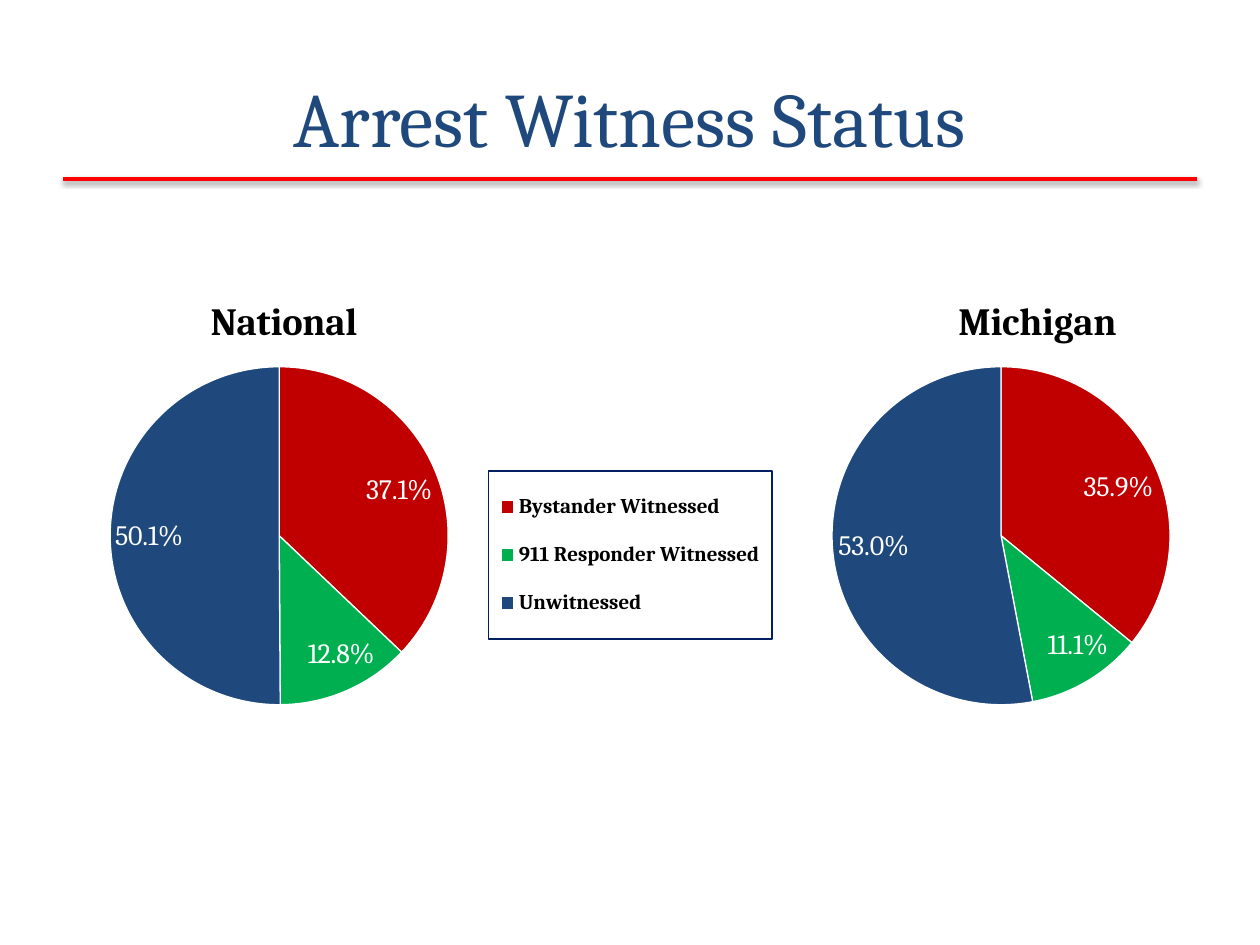
from dataclasses import dataclass

from lxml import etree
from pptx import Presentation
from pptx.chart.data import CategoryChartData
from pptx.dml.color import RGBColor
from pptx.enum.chart import XL_CHART_TYPE as ChartType
from pptx.enum.chart import XL_LABEL_POSITION as LabelPos
from pptx.enum.chart import XL_LEGEND_POSITION as LegendPos
from pptx.enum.shapes import MSO_CONNECTOR as Connector
from pptx.enum.text import MSO_ANCHOR as Anchor
from pptx.enum.text import PP_ALIGN as Align
from pptx.oxml import parse_xml
from pptx.oxml.ns import nsdecls, qn
from pptx.util import Pt


@dataclass(frozen=True)
class Theme:
    font: str = "Cambria"
    navy: RGBColor = RGBColor(0x1F, 0x49, 0x7D)
    border: RGBColor = RGBColor(0x00, 0x20, 0x60)
    crimson: RGBColor = RGBColor(0xC0, 0x00, 0x00)
    green: RGBColor = RGBColor(0x00, 0xB0, 0x50)
    rule: RGBColor = RGBColor(0xFF, 0x00, 0x00)
    black: RGBColor = RGBColor(0x00, 0x00, 0x00)
    white: RGBColor = RGBColor(0xFF, 0xFF, 0xFF)
    title_size: int = 44
    pie_title_size: int = 22
    base_size: int = 18
    label_size: int = 16
    legend_size: int = 12


THEME = Theme()
SLICE_COLORS = (THEME.crimson, THEME.green, THEME.navy)
WITNESSES = ("Bystander Witnessed", "911 Responder Witnessed", "Unwitnessed")
PIE_AREA = {"x": 0.095, "y": 0.273, "w": 0.548, "h": 0.542}
LEGEND_AREA = {"x": 0.635, "y": 0.44, "w": 0.36, "h": 0.27}


def style_font(font, size, color, bold=False):
    formats = {"name": THEME.font, "size": Pt(size), "bold": bold}
    for attribute, value in formats.items():
        setattr(font, attribute, value)
    font.color.rgb = color


def set_layout(part, area, inner=False):
    """Give a chart part a manual layout in fractions of the chart."""
    for old in part.findall(qn("c:layout")):
        part.remove(old)
    layout = etree.Element(qn("c:layout"))
    manual = etree.SubElement(layout, qn("c:manualLayout"))
    settings = [("layoutTarget", "inner")] if inner else []
    settings += [("xMode", "edge"), ("yMode", "edge")]
    settings += [(side, str(share)) for side, share in area.items()]
    for tag, value in settings:
        etree.SubElement(manual, qn(f"c:{tag}")).set("val", value)
    overlay = part.find(qn("c:overlay"))
    if overlay is None:
        part.insert(0, layout)
    else:
        overlay.addprevious(layout)


def add_header(slide, left, top, width, height):
    # Rule below the title, with a soft shadow
    rule_y = top + 80.6
    rule = slide.shapes.add_connector(
        Connector.STRAIGHT, Pt(left), Pt(rule_y), Pt(left + width), Pt(rule_y))
    rule.line.color.rgb = THEME.rule
    rule.line.width = Pt(2)
    rule._element.spPr.append(parse_xml(
        f'<a:effectLst {nsdecls("a")}>'
        '<a:outerShdw blurRad="39370" dist="20320" dir="5400000" rotWithShape="0">'
        '<a:srgbClr val="000000"><a:alpha val="38000"/></a:srgbClr>'
        '</a:outerShdw></a:effectLst>'))

    # Title
    title = slide.shapes.title
    box = {"left": left, "top": top, "width": width, "height": height}
    for side, length in box.items():
        setattr(title, side, Pt(length))
    frame = title.text_frame
    frame.text = "Arrest Witness Status"
    frame.vertical_anchor = Anchor.MIDDLE
    heading = frame.paragraphs[0]
    heading.alignment = Align.CENTER
    style_font(heading.runs[0].font, THEME.title_size, THEME.navy)


def add_legend(chart):
    chart.has_legend = True
    legend = chart.legend
    legend.position = LegendPos.RIGHT
    legend.include_in_layout = False
    set_layout(legend._element, LEGEND_AREA)
    legend._element.find(qn("c:overlay")).addnext(parse_xml(
        f'<c:spPr {nsdecls("c", "a")}><a:ln w="12700"><a:solidFill>'
        f'<a:srgbClr val="{THEME.border}"/></a:solidFill></a:ln></c:spPr>'))
    style_font(legend.font, THEME.legend_size, THEME.black, bold=True)


def add_pie(slide, box, region, title_x, categories, shares, with_legend):
    data = CategoryChartData()
    data.categories = categories
    data.add_series("Series 1", shares)
    chart = slide.shapes.add_chart(
        ChartType.PIE, *(Pt(length) for length in box), data).chart
    style_font(chart.font, THEME.base_size, THEME.black)

    # Region name
    chart.has_title = True
    heading = chart.chart_title
    heading.text_frame.text = region
    style_font(heading.text_frame.paragraphs[0].runs[0].font,
               THEME.pie_title_size, THEME.black, bold=True)
    set_layout(heading._element, {"x": title_x, "y": 0.15})

    # Slices and their shares
    plot = chart.plots[0]
    plot.vary_by_categories = True
    set_layout(plot._element.getparent(), PIE_AREA, inner=True)
    for index, color in enumerate(SLICE_COLORS):
        wedge = plot.series[0].points[index].format
        wedge.fill.solid()
        wedge.fill.fore_color.rgb = color
        wedge.line.color.rgb = THEME.white
        wedge.line.width = Pt(0.75)
    plot.has_data_labels = True
    labels = plot.data_labels
    formats = {"show_percentage": True, "show_value": False,
               "number_format": "0.0%", "number_format_is_linked": False,
               "position": LabelPos.BEST_FIT}
    for attribute, value in formats.items():
        setattr(labels, attribute, value)
    style_font(labels.font, THEME.label_size, THEME.white)

    # Legend shared by both pies
    chart.has_legend = False
    if with_legend:
        add_legend(chart)


def main():
    deck = Presentation()
    deck.slide_width, deck.slide_height = Pt(720), Pt(540)
    slide = deck.slides.add_slide(deck.slide_layouts[5])
    add_header(slide, 36, 21.6, 648, 90)
    pies = (
        (-6.5, "National", 0.273, WITNESSES, (37.1, 12.8, 50.1), True),
        (406, "Michigan", 0.306, ("1", "2", "3"), (35.9, 11.1, 53), False),
    )
    for left, *content in pies:
        add_pie(slide, (left, 112.3, 450, 356.4), *content)
    deck.save("out.pptx")


if __name__ == "__main__":
    main()
